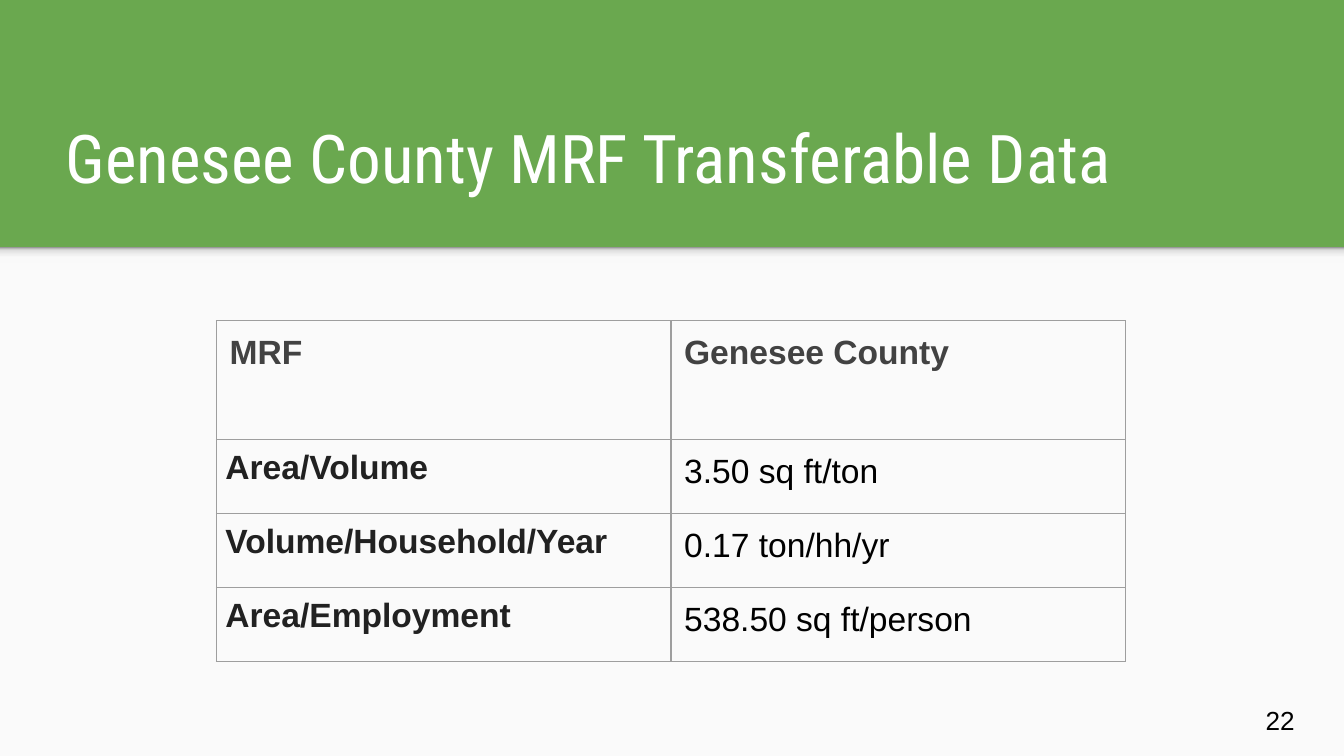
from lxml.etree import SubElement
from pptx import Presentation
from pptx.dml.color import RGBColor
from pptx.enum.shapes import MSO_SHAPE
from pptx.enum.text import MSO_ANCHOR
from pptx.oxml.ns import qn
from pptx.util import Cm, Pt

TITLE = "Genesee County MRF Transferable Data"
PAGE_NUMBER = "22"
HEADER = ("MRF", "Genesee County")
MEASURES = [
    ("Area/Volume", "3.50 sq ft/ton"),
    ("Volume/Household/Year", "0.17 ton/hh/yr"),
    ("Area/Employment", "538.50 sq ft/person"),
]
EDGE_STOPS = [(0, "F9F9F9"), (36, "F9F9F9"), (80, "DEDEDE"), (100, "999999")]
SLIDE_WIDTH, SLIDE_HEIGHT, BANNER_HEIGHT = 25.4, 14.29, 4.67
COLUMN_WIDTH, HEADER_HEIGHT, MEASURE_HEIGHT = 8.59, 2.25, 1.4
WIDE_INSET, NARROW_INSET = 0.25, 0.17


def color(value):
    return RGBColor.from_string(value)


def set_insets(holder, inset):
    holder.margin_left = holder.margin_right = Cm(inset)
    holder.margin_top = holder.margin_bottom = Cm(inset)


def add_run(frame, words, size, ink, font="Arial", bold=False):
    run = frame.paragraphs[0].add_run()
    run.text = words
    run.font.size = Pt(size)
    run.font.name = font
    run.font.bold = bold
    run.font.color.rgb = color(ink)


def add_band(slide, top, height):
    band = slide.shapes.add_shape(
        MSO_SHAPE.RECTANGLE, Cm(0), Cm(top), Cm(SLIDE_WIDTH), Cm(height))
    band.shadow.inherit = False
    band.line.fill.background()
    return band


def shade_edge(edge):
    edge.fill.gradient()
    edge.fill.gradient_angle = 90
    stops = next(edge.element.iter(qn("a:gsLst")))
    stops.clear()
    for position, shade in EDGE_STOPS:
        stop = SubElement(stops, qn("a:gs"), pos=str(position * 1000))
        SubElement(stop, qn("a:srgbClr"), val=shade)


def add_label(slide, box, anchor, *run):
    label = slide.shapes.add_textbox(*map(Cm, box))
    frame = label.text_frame
    frame.word_wrap = True
    frame.vertical_anchor = anchor
    set_insets(frame, WIDE_INSET)
    add_run(frame, *run)


def draw_borders(cell):
    properties = cell._tc.get_or_add_tcPr()
    for side in ("a:lnL", "a:lnR", "a:lnT", "a:lnB"):
        border = SubElement(properties, qn(side), w=str(Pt(0.75)))
        fill = SubElement(border, qn("a:solidFill"))
        SubElement(fill, qn("a:srgbClr"), val="9E9E9E")


def add_measures(slide):
    rows = [HEADER] + MEASURES
    heights = [HEADER_HEIGHT] + [MEASURE_HEIGHT] * len(MEASURES)
    table = slide.shapes.add_table(
        len(rows), len(HEADER), Cm(4.09), Cm(6.06),
        Cm(COLUMN_WIDTH * len(HEADER)), Cm(sum(heights))).table
    table.horz_banding = False
    for column in table.columns:
        column.width = Cm(COLUMN_WIDTH)
    for r, (words, height) in enumerate(zip(rows, heights)):
        table.rows[r].height = Cm(height)
        for c, word in enumerate(words):
            cell = table.cell(r, c)
            is_header, is_name = r == 0, c == 0
            ink = "424242" if is_header else "212121" if is_name else "000000"
            inset = NARROW_INSET if is_name and not is_header else WIDE_INSET
            draw_borders(cell)
            cell.fill.background()
            set_insets(cell, inset)
            add_run(cell.text_frame, word, 18, ink, bold=is_header or is_name)


def main():
    deck = Presentation()
    deck.slide_width, deck.slide_height = Cm(SLIDE_WIDTH), Cm(SLIDE_HEIGHT)
    slide = deck.slides.add_slide(deck.slide_layouts[6])
    slide.background.fill.solid()
    slide.background.fill.fore_color.rgb = color("6AA84F")

    body = add_band(slide, BANNER_HEIGHT, SLIDE_HEIGHT - BANNER_HEIGHT)
    body.fill.solid()
    body.fill.fore_color.rgb = color("FAFAFA")
    shade_edge(add_band(slide, BANNER_HEIGHT, 0.3))

    add_label(slide, (0.99, 1.85, 22.83, 2.13), MSO_ANCHOR.BOTTOM,
              TITLE, 36, "FFFFFF", "Roboto Condensed")
    add_label(slide, (23.67, 13.06, 1.52, 1.09), MSO_ANCHOR.MIDDLE,
              PAGE_NUMBER, 14, "000000")
    add_measures(slide)
    deck.save("out.pptx")


if __name__ == "__main__":
    main()
